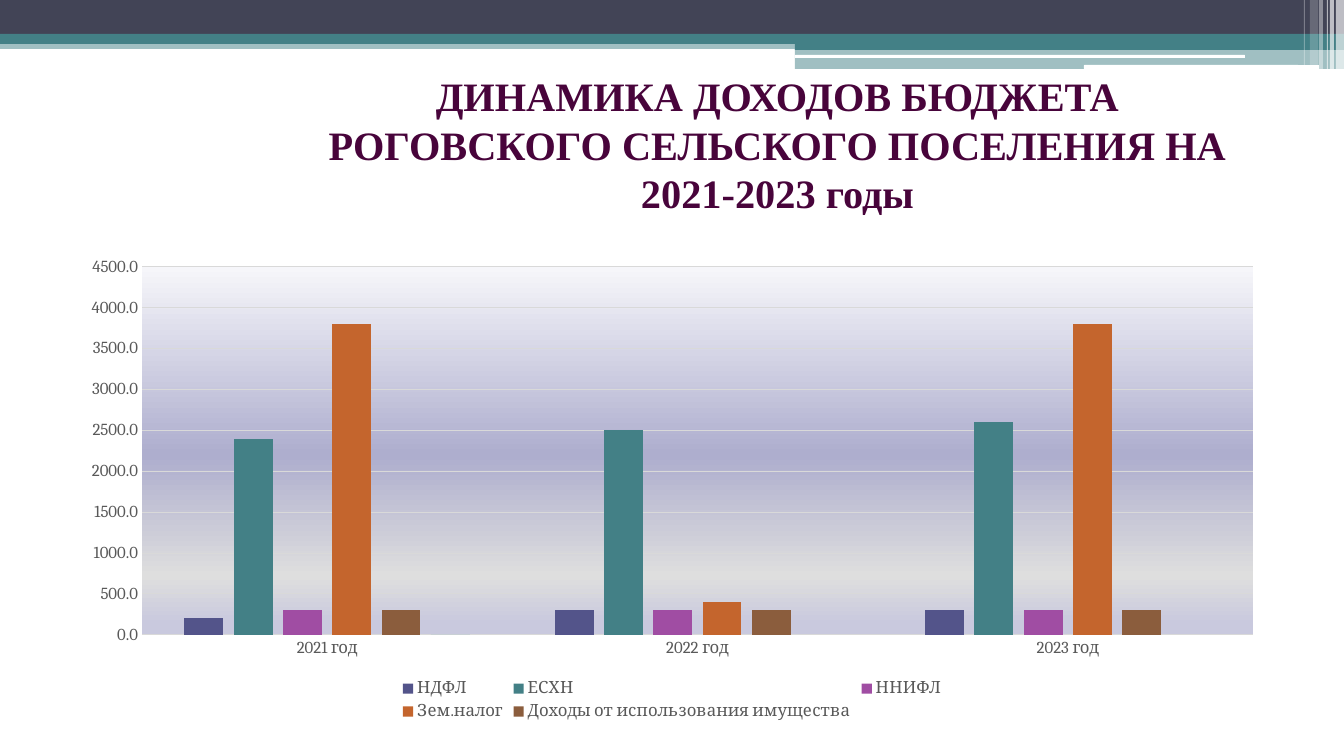
import pptx
import pptx.chart.data
import pptx.dml.color
import pptx.enum.chart
import pptx.enum.shapes
import pptx.enum.text
import pptx.oxml
import pptx.oxml.ns
import pptx.util

PX = 914400 / 100.8
SLIDE = (1344, 756)
COLORS = {
    "navy": "424456", "teal": "438086", "white": "FFFFFF", "title": "48043B",
    "label": "595959", "grid": "D9D9D9",
}
TITLE = "ДИНАМИКА ДОХОДОВ БЮДЖЕТА РОГОВСКОГО СЕЛЬСКОГО ПОСЕЛЕНИЯ НА 2021-2023 годы"
TITLE_BOX = (286, 69, 983, 150)
BANDS = [
    ("RECTANGLE", (0, 40, 1344, 9), "teal", 50),
    ("RECTANGLE", (0, 0, 1344, 34), "navy", 100),
    ("RECTANGLE", (0, 34, 1344, 10), "teal", 100),
    ("RECTANGLE", (795, 40, 549, 10), "teal", 100),
    ("RECTANGLE", (795, 49, 549, 20), "teal", 50),
    ("ROUNDED_RECTANGLE", (795, 55, 450, 3), "white", 100),
    ("ROUNDED_RECTANGLE", (1084, 65, 235, 4), "white", 100),
]
STRIPES = [
    (1336, 8, 69, 65), (1330, 4, 69, 65), (1327, 1, 69, 60),
    (1319, 4, 69, 40), (1310, 8, 65, 20), (1304, 1, 65, 30),
]
CHART_BOX = (67, 248, 1210, 477)
PLOT_BOX = (142, 267, 1111, 368)
YEARS = ["2021 год", "2022 год", "2023 год"]
SERIES = [
    ("НДФЛ", (200, 300, 300), "53548A"),
    ("ЕСХН", (2400, 2500, 2600), "438086"),
    ("ННИФЛ", (300, 300, 300), "A04DA3"),
    ("Зем.налог", (3800, 400, 3800), "C4652D"),
    ("Доходы от использования имущества", (300, 300, 300), "8B5D3D"),
    ("Series 6", (0, None, None), "5C92B5"),
]
HIDDEN_LEGEND_ENTRY = 5
PLOT_STOPS = [(0, "F6F6FA"), (51, "AEAECE"), (84, "DEDEDE"), (97, "C9C9DE")]


def emu(box):
    return [round(v * PX) for v in box]


def rgb(value):
    return pptx.dml.color.RGBColor.from_string(value)


def xml(tag, body):
    ns = pptx.oxml.ns.nsdecls("a", "c")
    return pptx.oxml.parse_xml(f"<{tag} {ns}>{body}</{tag}>")


def add_band(slide, kind, box, color, alpha):
    sp = slide.shapes.add_shape(pptx.enum.shapes.MSO_SHAPE[kind], *emu(box))
    sp.shadow.inherit = False
    sp.fill.solid()
    sp.fill.fore_color.rgb = rgb(COLORS[color])
    sp.line.fill.background()
    if alpha < 100:
        clr = sp.fill._xPr.find(".//" + pptx.oxml.ns.qn("a:srgbClr"))
        clr.append(pptx.oxml.parse_xml(
            f'<a:alpha {pptx.oxml.ns.nsdecls("a")} val="{alpha * 1000}"/>'))


def add_title(slide):
    tf = slide.shapes.add_textbox(*emu(TITLE_BOX)).text_frame
    tf.word_wrap = True
    tf.vertical_anchor = pptx.enum.text.MSO_ANCHOR.MIDDLE
    p = tf.paragraphs[0]
    p.text = TITLE
    p.alignment = pptx.enum.text.PP_ALIGN.CENTER
    font = p.runs[0].font
    font.name, font.size, font.bold = "Times New Roman", pptx.util.Pt(28.8), True
    font.color.rgb = rgb(COLORS["title"])


def set_font(font):
    font.name, font.size = "Cambria", pptx.util.Pt(12)
    font.color.rgb = rgb(COLORS["label"])


def set_line(line):
    line.color.rgb = rgb(COLORS["grid"])
    line.width = pptx.util.Pt(0.75)


def style_plot_area(chart):
    area = chart._chartSpace.chart.plotArea
    for old in area.findall(pptx.oxml.ns.qn("c:layout")):
        area.remove(old)
    cx, cy, cw, ch = CHART_BOX
    x, y, w, h = PLOT_BOX
    parts = {"x": (x - cx) / cw, "y": (y - cy) / ch, "w": w / cw, "h": h / ch}
    body = '<c:layoutTarget val="inner"/><c:xMode val="edge"/><c:yMode val="edge"/>'
    body += "".join(f'<c:{k} val="{v:.4f}"/>' for k, v in parts.items())
    area.insert(0, xml("c:layout", f"<c:manualLayout>{body}</c:manualLayout>"))
    stops = "".join(f'<a:gs pos="{pos * 1000}"><a:srgbClr val="{color}"/></a:gs>'
                    for pos, color in PLOT_STOPS)
    area.append(xml("c:spPr", f'<a:gradFill><a:gsLst>{stops}</a:gsLst>'
                    '<a:lin ang="5400000" scaled="0"/></a:gradFill><a:ln><a:noFill/></a:ln>'))


def add_income_chart(slide):
    data = pptx.chart.data.CategoryChartData(number_format="0.0")
    data.categories = YEARS
    for name, values, _ in SERIES:
        data.add_series(name, values)
    kind = pptx.enum.chart.XL_CHART_TYPE.COLUMN_CLUSTERED
    chart = slide.shapes.add_chart(kind, *emu(CHART_BOX), data).chart
    set_font(chart.font)
    chart.has_title = False
    plot = chart.plots[0]
    plot.gap_width, plot.overlap, plot.vary_by_categories = 219, -27, False
    for series, (_, _, color) in zip(plot.series, SERIES):
        series.format.fill.solid()
        series.format.fill.fore_color.rgb = rgb(color)
        series.invert_if_negative = False
    for axis in (chart.category_axis, chart.value_axis):
        axis.major_tick_mark = axis.minor_tick_mark = pptx.enum.chart.XL_TICK_MARK.NONE
        set_font(axis.tick_labels.font)
    set_line(chart.category_axis.format.line)
    values = chart.value_axis
    values.minimum_scale, values.maximum_scale, values.major_unit = 0, 4500, 500
    values.tick_labels.number_format = "0.0"
    values.tick_labels.number_format_is_linked = False
    values.format.line.fill.background()
    set_line(values.major_gridlines.format.line)
    chart.has_legend = True
    legend = chart.legend
    legend.position = pptx.enum.chart.XL_LEGEND_POSITION.BOTTOM
    legend.include_in_layout = False
    set_font(legend.font)
    legend._element.insert(1, xml(
        "c:legendEntry", f'<c:idx val="{HIDDEN_LEGEND_ENTRY}"/><c:delete val="1"/>'))
    style_plot_area(chart)


def main():
    prs = pptx.Presentation()
    prs.slide_width, prs.slide_height = emu(SLIDE)
    slide = prs.slides.add_slide(prs.slide_layouts[6])
    for band in BANDS:
        add_band(slide, *band)
    for left, width, height, alpha in STRIPES:
        add_band(slide, "RECTANGLE", (left, 0, width, height), "white", alpha)
    add_title(slide)
    add_income_chart(slide)
    prs.save("out.pptx")


if __name__ == "__main__":
    main()
